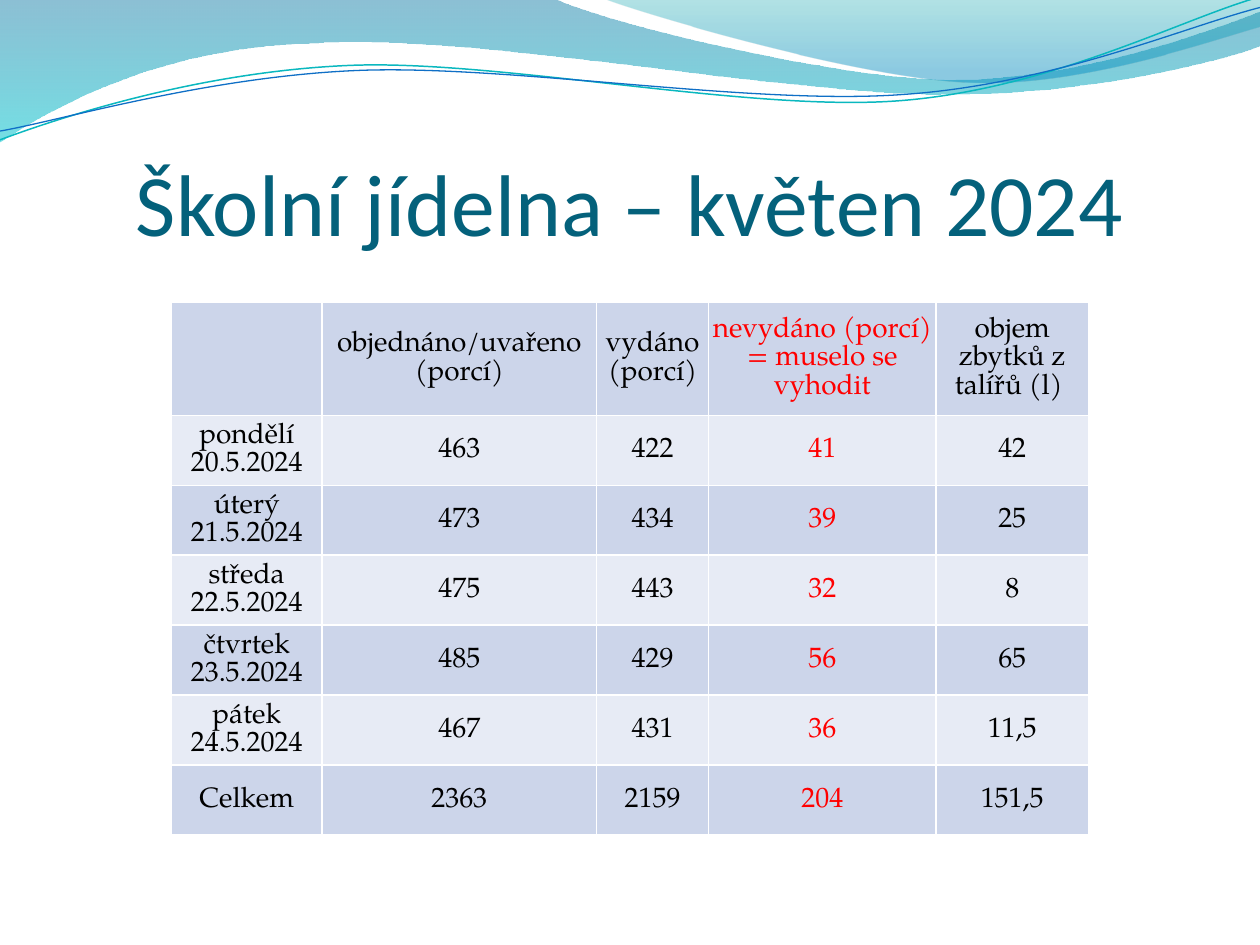
from math import cos, radians, sin

from lxml import etree
from pptx import Presentation
from pptx.dml.color import RGBColor
from pptx.enum.text import MSO_ANCHOR, PP_ALIGN
from pptx.oxml.ns import qn
from pptx.util import Pt

CENTER = PP_ALIGN.CENTER
MIDDLE = MSO_ANCHOR.MIDDLE
BOTTOM = MSO_ANCHOR.BOTTOM

THEME = {
    "title": "04617B", "text": "000000", "waste": "FF0000",
    "odd_row": "CCD5EA", "even_row": "E7EBF5", "border": "FFFFFF",
    "title_font": "Calibri", "title_size": 50,
    "table_font": "TeX Gyre Pagella", "table_size": 16,
}

TITLE = "Školní jídelna – květen 2024"
ROWS = [
    ["", "objednáno/uvařeno (porcí)", "vydáno (porcí)",
     "nevydáno (porcí) = muselo se vyhodit", "objem zbytků z talířů (l) "],
    ["pondělí 20.5.2024", "463", "422", "41", "42"],
    ["úterý 21.5.2024", "473", "434", "39", "25"],
    ["středa 22.5.2024", "475", "443", "32", "8"],
    ["čtvrtek 23.5.2024", "485", "429", "56", "65"],
    ["pátek 24.5.2024", "467", "431", "36", "11,5"],
    ["Celkem", "2363", "2159", "204", "151,5"],
]
WASTE_COLUMN = 3
TABLE_LEFT, TABLE_TOP = 98, 173
COLUMN_WIDTHS = [86, 157, 64, 130, 87]
HEADER_HEIGHT, ROW_HEIGHT = 64.3, 40

# A segment with one point is a straight line, with three a Bezier curve.
# Gradient stops: position, colour, opacity in percent.
WAVES = [
    {"start": (0, 0),
     "segments": [
         [(316.8, -0.7)],
         [(342.7, 12.2), (478.1, 45.4), (545.8, 45.4)],
         [(614.2, 45.4), (689.8, 18.7), (720, 6.5)],
         [(720.7, 25.9)],
         [(707.8, 31.7), (626.4, 54.7), (537.1, 54)],
         [(447.8, 54), (275, 20.2), (185, 24.5)],
         [(92.9, 25.9), (33.1, 59.8), (-0.7, 81.4)],
         [(0, 0)]],
     "gradient": [(0, "0074A1", 45), (1, "00C6CF", 55)]},
    {"start": (344.9, -0.7),
     "segments": [
         [(366.5, 7.9), (491, 44.6), (553.7, 46.8)],
         [(616.3, 49.7), (691.9, 23), (720, 15.1)],
         [(720, 0)],
         [(344.9, -0.7)]],
     "gradient": [(0, "00A1A9", 30), (0.8, "008BBF", 45)]},
    {"start": (0, 79.9),
     "segments": [
         [(34.6, 67), (113.8, 41), (199.4, 37.4)],
         [(284.4, 33.8), (427, 64.1), (513.4, 57.6)],
         [(599.8, 51.1), (675.4, 10.8), (718.6, -1.4)]],
     "line": ("0AB8BF", 0.85), "tilt": 2.7, "pivot": (359.3, 41.4)},
    {"start": (0, 74.9),
     "segments": [
         [(33.8, 69.1), (118.1, 43.9), (203.8, 40.3)],
         [(290.2, 36.7), (429.8, 60.5), (516.2, 54)],
         [(601.9, 48.2), (677.5, 15.1), (720, 4.3)]],
     "line": ("0F6FC6", 0.75), "tilt": 2.7, "pivot": (359.7, 42.5)},
]


def rgb(value):
    return RGBColor.from_string(value)


def level(point, wave):
    """Turn a point clockwise by the wave's tilt, which the shape's rotation undoes."""
    angle = radians(wave.get("tilt", 0))
    pivot_x, pivot_y = wave.get("pivot", (0, 0))
    dx, dy = point[0] - pivot_x, point[1] - pivot_y
    return (Pt(pivot_x + dx * cos(angle) - dy * sin(angle)),
            Pt(pivot_y + dx * sin(angle) + dy * cos(angle)))


def merge_curves(shape, segments):
    """Join the line steps of each three-point segment into one Bezier curve."""
    steps = iter(list(shape.element.iter(qn("a:lnTo"))))
    for segment in segments:
        group = [next(steps) for _ in segment]
        if len(group) == 3:
            curve = etree.Element(qn("a:cubicBezTo"))
            group[0].addprevious(curve)
            for step in group:
                curve.append(step[0])
                step.getparent().remove(step)


def add_wave(slide, wave):
    builder = slide.shapes.build_freeform(*level(wave["start"], wave))
    points = [level(point, wave) for segment in wave["segments"] for point in segment]
    builder.add_line_segments(points, close="gradient" in wave)
    shape = builder.convert_to_shape()
    merge_curves(shape, wave["segments"])
    shape.rotation = -wave.get("tilt", 0)
    shape.shadow.inherit = False
    if "line" in wave:
        colour, width = wave["line"]
        shape.fill.background()
        shape.line.color.rgb = rgb(colour)
        shape.line.width = Pt(width)
        return
    shape.line.fill.background()
    shape.fill.gradient()
    shape.fill.gradient_angle = 270
    for stop, (position, colour, _) in zip(shape.fill.gradient_stops, wave["gradient"]):
        stop.position = position
        stop.color.rgb = rgb(colour)
    colours = shape.element.spPr.iter(qn("a:srgbClr"))
    for colour, (_, _, opacity) in zip(colours, wave["gradient"]):
        etree.SubElement(colour, qn("a:alpha"), val=str(opacity * 1000))


def style_text(frame, font, size, colour):
    for paragraph in frame.paragraphs:
        paragraph.alignment = CENTER
        for run in paragraph.runs:
            run.font.name = font
            run.font.size = Pt(size)
            run.font.color.rgb = rgb(colour)


def add_title(slide):
    frame = slide.shapes.add_textbox(Pt(36), Pt(55), Pt(648), Pt(90)).text_frame
    frame.word_wrap = True
    frame.vertical_anchor = BOTTOM
    frame.margin_left = frame.margin_right = frame.margin_bottom = 0
    frame.text = TITLE
    style_text(frame, THEME["title_font"], THEME["title_size"], THEME["title"])


def add_borders(cell):
    properties = cell._tc.get_or_add_tcPr()
    for index, side in enumerate(("lnL", "lnR", "lnT", "lnB")):
        border = etree.Element(qn("a:" + side), w=str(Pt(1)))
        fill = etree.SubElement(border, qn("a:solidFill"))
        etree.SubElement(fill, qn("a:srgbClr"), val=THEME["border"])
        properties.insert(index, border)


def add_table(slide):
    heights = [HEADER_HEIGHT] + [ROW_HEIGHT] * (len(ROWS) - 1)
    table = slide.shapes.add_table(
        len(ROWS), len(COLUMN_WIDTHS), Pt(TABLE_LEFT), Pt(TABLE_TOP),
        Pt(sum(COLUMN_WIDTHS)), Pt(sum(heights))).table
    table.first_row = table.horz_banding = False
    for column, width in zip(table.columns, COLUMN_WIDTHS):
        column.width = Pt(width)
    for r, (row, height) in enumerate(zip(ROWS, heights)):
        table.rows[r].height = Pt(height)
        for c, value in enumerate(row):
            cell = table.cell(r, c)
            cell.vertical_anchor = MIDDLE
            cell.margin_left = cell.margin_right = cell.margin_top = Pt(0.75)
            cell.margin_bottom = 0
            cell.fill.solid()
            cell.fill.fore_color.rgb = rgb(THEME["even_row" if r % 2 else "odd_row"])
            add_borders(cell)
            cell.text_frame.text = value
            style_text(cell.text_frame, THEME["table_font"], THEME["table_size"],
                       THEME["waste" if c == WASTE_COLUMN else "text"])


def main():
    presentation = Presentation()
    presentation.slide_width, presentation.slide_height = Pt(720), Pt(540)
    slide = presentation.slides.add_slide(presentation.slide_layouts[6])
    for wave in WAVES:
        add_wave(slide, wave)
    add_title(slide)
    add_table(slide)
    presentation.save("out.pptx")


if __name__ == "__main__":
    main()
